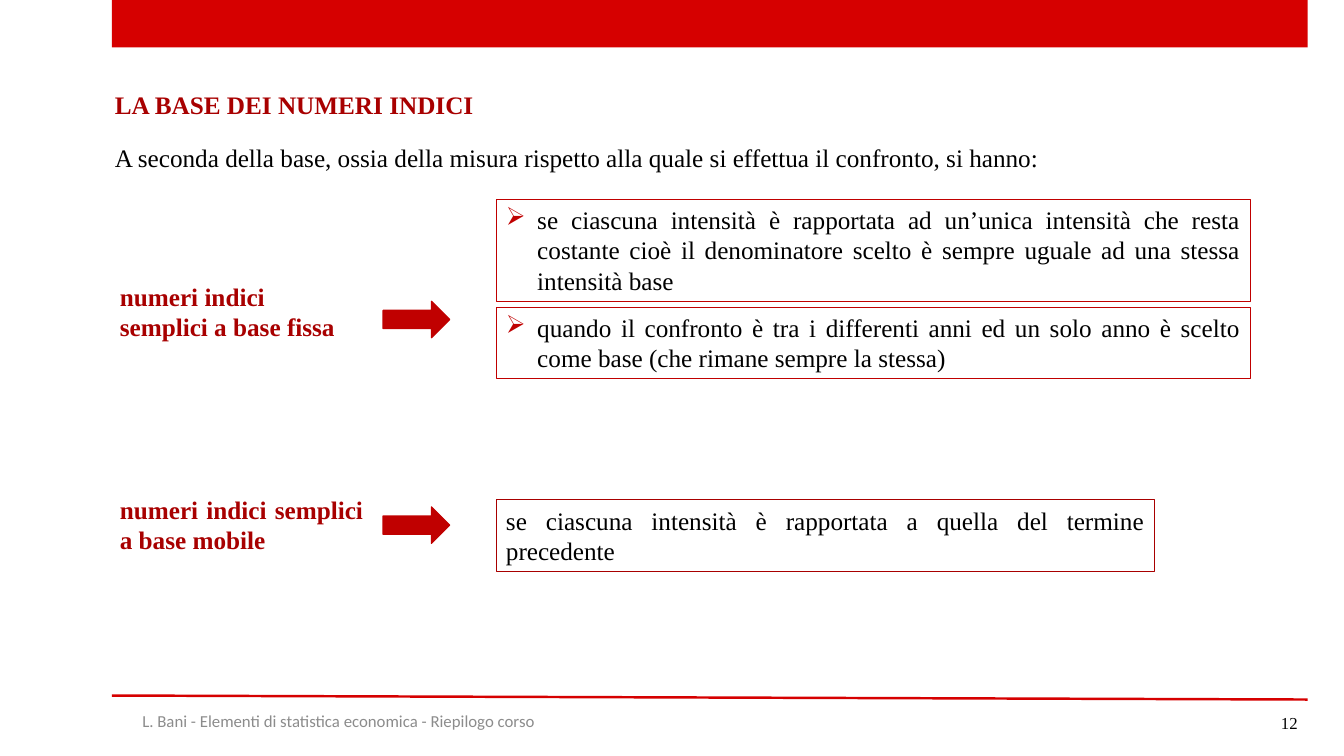
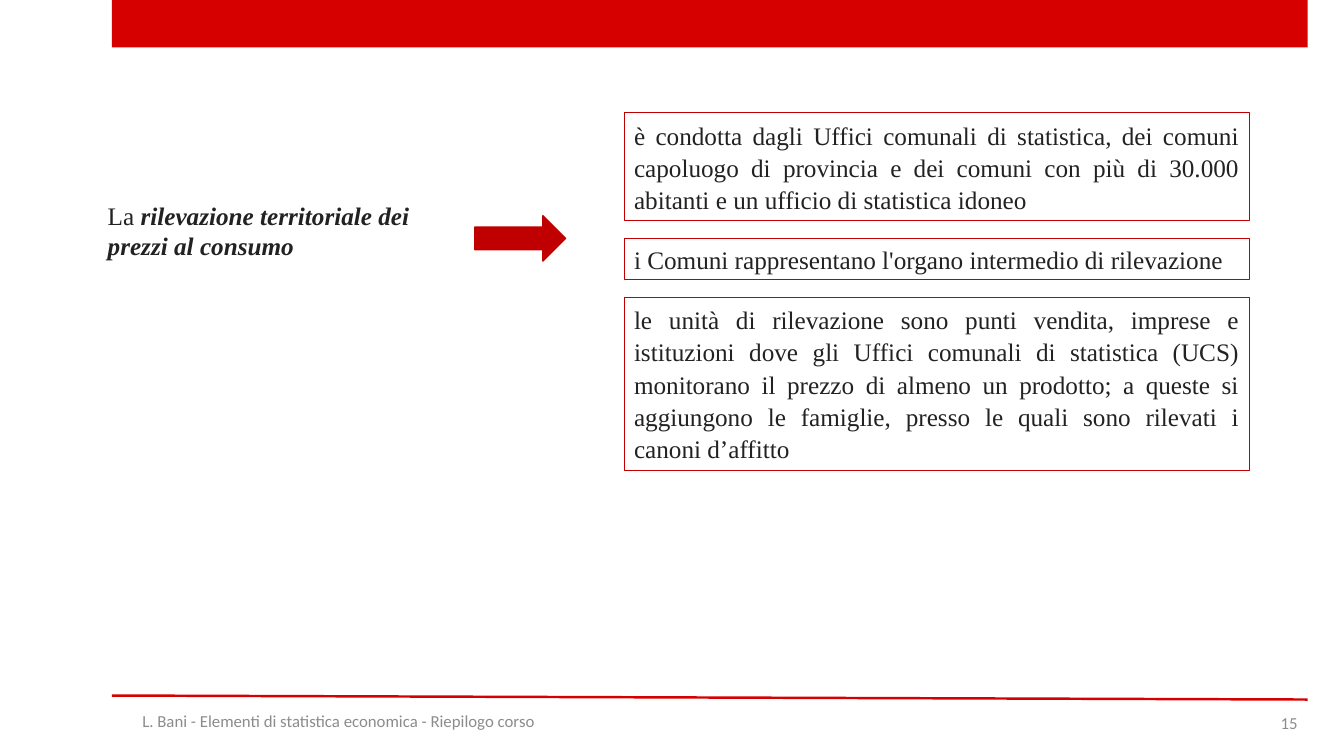
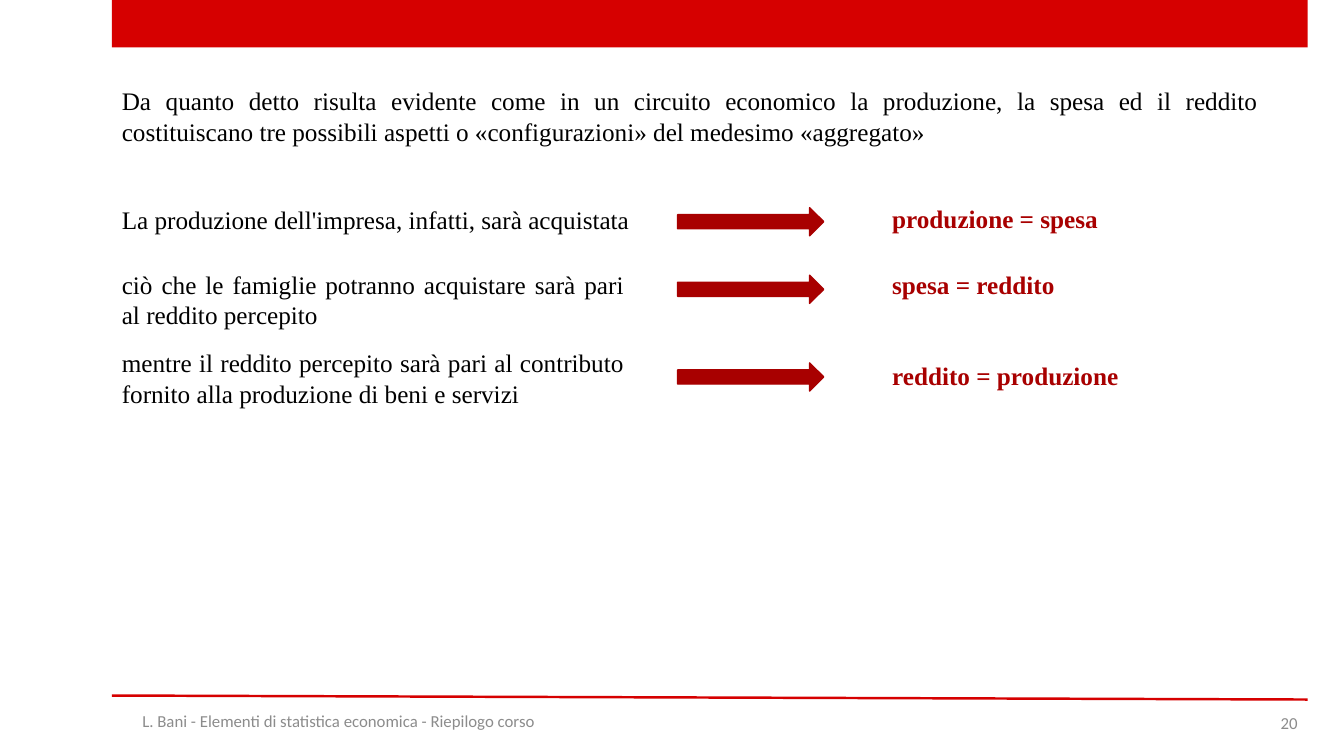
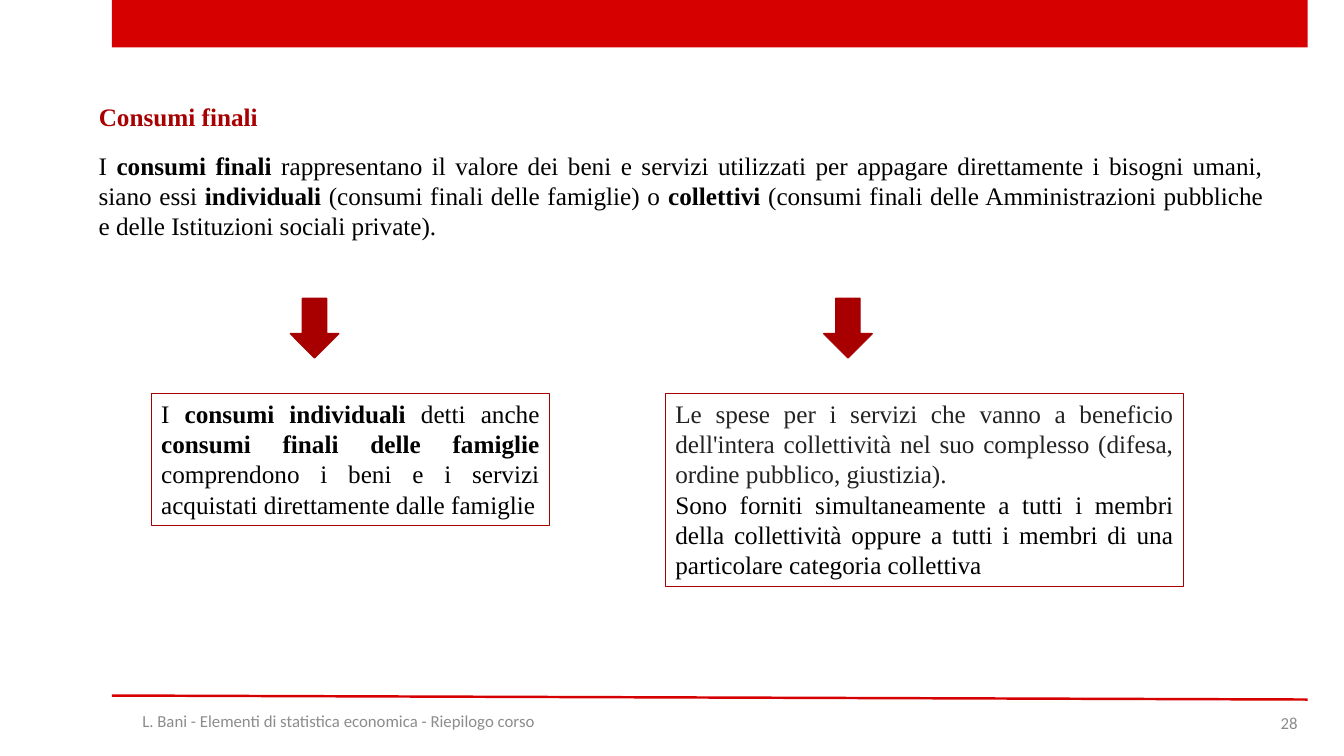
from dataclasses import dataclass

from lxml import etree
from pptx import Presentation
from pptx import util as u
from pptx.dml.color import RGBColor
from pptx.enum import shapes, text
from pptx.oxml.ns import qn


@dataclass(frozen=True)
class Theme:
    band: str = "D60000"
    red: str = "C00000"
    dark_red: str = "A80000"
    black: str = "000000"
    ink: str = "222222"
    grey: str = "8C8C8C"
    serif: str = "Times New Roman"
    sans: str = "Calibri"
    body: int = 18
    small: int = 12
    frame_line: float = 0.75
    arrow_line: float = 1
    rule_line: float = 1.75


@dataclass(frozen=True)
class Box:
    left: float
    top: float
    width: float
    height: float

    def inches(self):
        return [u.Inches(n) for n in (self.left, self.top, self.width, self.height)]


THEME = Theme()
LEFT, JUSTIFY = text.PP_ALIGN.LEFT, text.PP_ALIGN.JUSTIFY
RIGHT_ARROW = shapes.MSO_SHAPE.RIGHT_ARROW
DOWN_ARROW = shapes.MSO_SHAPE.DOWN_ARROW
TITLE_ONLY, BLANK = 5, 6
LINE, TWO_LINES, THREE_LINES = 0.4, 0.71, 1.01
FOOTER = "L. Bani - Elementi di statistica economica - Riepilogo corso"


def rgb(color):
    return RGBColor.from_string(color)


def add_bullet(para, color):
    props = para._p.get_or_add_pPr()
    indent = u.Inches(0.31)
    props.set("marL", str(indent))
    props.set("indent", str(-indent))
    bullet_color = etree.SubElement(props, qn("a:buClr"))
    etree.SubElement(bullet_color, qn("a:srgbClr")).set("val", color)
    etree.SubElement(props, qn("a:buChar")).set("char", "➢")


def write(shape, content, color=THEME.black, size=THEME.body, font=THEME.serif,
          bold=False, italic=False, align=LEFT, anchor=text.MSO_ANCHOR.TOP,
          spacing=None, bullet=None, wrap=True):
    """Append a paragraph; parts between ** marks are bold, and italic if asked."""
    frame = shape.text_frame
    frame.word_wrap = wrap
    frame.auto_size = text.MSO_AUTO_SIZE.NONE
    frame.vertical_anchor = anchor
    para = frame.add_paragraph() if frame.text else frame.paragraphs[0]
    para.alignment = align
    if bullet:
        add_bullet(para, bullet)
    if spacing:
        para.line_spacing = spacing
    for index, part in enumerate(content.split("**")):
        if not part:
            continue
        marked = index % 2 == 1
        span = para.add_run()
        span.text = part
        span.font.name, span.font.size = font, u.Pt(size)
        span.font.bold = bold or marked
        span.font.italic = italic and marked
        span.font.color.rgb = rgb(color)


def add_text(page, box, content, **style):
    write(page.shapes.add_textbox(*box.inches()), content, **style)


def add_title(page, box, content, **style):
    title = page.shapes.title
    title.left, title.top, title.width, title.height = box.inches()
    write(title, content, color=THEME.dark_red, bold=True, **style)


def add_solid(page, kind, box, color, line=None):
    shape = page.shapes.add_shape(kind, *box.inches())
    shape.shadow.inherit = False
    shape.fill.solid()
    shape.fill.fore_color.rgb = rgb(color)
    if line:
        shape.line.color.rgb = rgb(color)
        shape.line.width = u.Pt(line)
    else:
        shape.line.fill.background()
    return shape


def add_arrow(page, kind, box, color):
    add_solid(page, kind, box, color, THEME.arrow_line)


def add_frame(page, box, content, line=THEME.red, **style):
    frame = page.shapes.add_shape(shapes.MSO_SHAPE.RECTANGLE, *box.inches())
    frame.shadow.inherit = False
    frame.fill.background()
    frame.line.color.rgb = rgb(line)
    frame.line.width = u.Pt(THEME.frame_line)
    write(frame, content, align=JUSTIFY, **style)
    return frame


def stack_frames(page, left, top, width, gap, items):
    """Place framed texts, given as (height, text, style), one below another."""
    for height, content, style in items:
        add_frame(page, Box(left, top, width, height), content, **style)
        top += height + gap


def decorate_master(deck, page):
    """Draw the band and the bottom rule on a page, then move them to the master."""
    band = add_solid(page, shapes.MSO_SHAPE.RECTANGLE,
                     Box(1.11, 0, 11.86, 0.47), THEME.band)
    ends = [u.Inches(n) for n in (1.11, 6.9, 12.97, 6.94)]
    rule = page.shapes.add_connector(shapes.MSO_CONNECTOR.STRAIGHT, *ends)
    rule.line.color.rgb = rgb(THEME.band)
    rule.line.width = u.Pt(THEME.rule_line)
    etree.SubElement(rule.element.spPr, qn("a:effectLst"))
    for shape in (band, rule):
        deck.slide_master.shapes.element.append(shape.element)


def add_page(deck, layout, number, number_color=THEME.grey, number_font=THEME.sans):
    page = deck.slides.add_slide(deck.slide_layouts[layout])
    middle = text.MSO_ANCHOR.MIDDLE
    add_text(page, Box(1.11, 6.95, 4.5, LINE), FOOTER, color=THEME.grey,
             size=THEME.small, font=THEME.sans, align=text.PP_ALIGN.CENTER, anchor=middle)
    add_text(page, Box(9.97, 6.97, 3, LINE), str(number), color=number_color,
             size=THEME.small, font=number_font, align=text.PP_ALIGN.RIGHT, anchor=middle)
    return page


def index_base_slide(deck):
    page = add_page(deck, TITLE_ONLY, 12, THEME.black, THEME.serif)
    decorate_master(deck, page)
    add_title(page, Box(1.04, 0.84, 3.79, LINE), "LA BASE DEI NUMERI INDICI", wrap=False)
    add_text(page, Box(1.04, 1.36, 10.58, LINE),
             "A seconda della base, ossia della misura rispetto alla quale "
             "si effettua il confronto, si hanno:")

    terms = [(2.74, 2.48, 2.99, LEFT, "numeri indici semplici a base fissa"),
             (4.85, 2.61, 5.03, JUSTIFY, "numeri indici semplici a base mobile")]
    for top, width, arrow_top, align, term in terms:
        add_text(page, Box(1.09, top, width, TWO_LINES), term,
                 color=THEME.dark_red, bold=True, align=align)
        add_arrow(page, RIGHT_ARROW, Box(3.8, arrow_top, 0.66, 0.36), THEME.red)

    bulleted = {"bullet": THEME.red}
    stack_frames(page, 4.92, 1.98, 7.48, 0.06, [
        (THREE_LINES, "se ciascuna intensità è rapportata ad un’unica intensità che resta "
         "costante cioè il denominatore scelto è sempre uguale ad una stessa "
         "intensità base", bulleted),
        (TWO_LINES, "quando il confronto è tra i differenti anni ed un solo anno è scelto "
         "come base (che rimane sempre la stessa)", bulleted)])
    add_frame(page, Box(4.92, 4.96, 6.53, TWO_LINES),
              "se ciascuna intensità è rapportata a quella del termine precedente",
              line=THEME.dark_red)


def price_survey_slide(deck):
    page = add_page(deck, BLANK, 15)
    add_text(page, Box(0.97, 1.94, 3.5, TWO_LINES),
             "La** rilevazione territoriale dei prezzi al consumo**",
             color=THEME.ink, italic=True)
    add_arrow(page, RIGHT_ARROW, Box(4.71, 2.14, 0.9, 0.45), THEME.red)
    plain = {"color": THEME.ink}
    loose = {"color": THEME.ink, "spacing": 1.07}
    stack_frames(page, 6.19, 1.12, 6.2, 0.18, [
        (1.07, "è condotta dagli Uffici comunali di statistica, dei comuni capoluogo di "
         "provincia e dei comuni con più di 30.000 abitanti e un ufficio di "
         "statistica idoneo", loose),
        (LINE, "i Comuni rappresentano l'organo intermedio di rilevazione", plain),
        (1.72, "le unità di rilevazione sono punti vendita, imprese e istituzioni dove gli "
         "Uffici comunali di statistica (UCS) monitorano il prezzo di almeno un "
         "prodotto; a queste si aggiungono le famiglie, presso le quali sono rilevati "
         "i canoni d’affitto", loose)])


def equality_row(page, box, statement, result, arrow_drop, result_drop):
    """Put a statement in the box, then an arrow and the equality it leads to."""
    add_text(page, box, statement, align=JUSTIFY)
    add_arrow(page, RIGHT_ARROW,
              Box(box.left + 5.61, box.top + arrow_drop, 1.45, 0.28), THEME.dark_red)
    add_text(page, Box(box.left + 7.64, box.top + result_drop, 2.58, LINE), result,
             color=THEME.dark_red, bold=True)


def circuit_slide(deck):
    page = add_page(deck, BLANK, 20)
    add_text(page, Box(1.11, 0.8, 11.47, TWO_LINES),
             "Da quanto detto risulta evidente come in un circuito economico la produzione, "
             "la spesa ed il reddito costituiscano tre possibili aspetti o "
             "«configurazioni» del medesimo «aggregato»", align=JUSTIFY)
    equality_row(page, Box(1.11, 1.98, 5.61, LINE),
                 "La produzione dell'impresa, infatti, sarà acquistata",
                 "produzione = spesa", 0.08, -0.01)
    equality_row(page, Box(1.11, 2.62, 5.18, TWO_LINES),
                 "ciò che le famiglie potranno acquistare sarà pari al reddito percepito",
                 "spesa = reddito", 0.11, 0)
    equality_row(page, Box(1.11, 3.4, 5.18, TWO_LINES),
                 "mentre il reddito percepito sarà pari al contributo fornito alla "
                 "produzione di beni e servizi", "reddito = produzione", 0.2, 0.13)


def consumption_column(page, box, arrow_shift, content, **style):
    """Frame a text in the box, with a down arrow above it."""
    add_arrow(page, DOWN_ARROW,
              Box(box.left + arrow_shift, box.top - 0.94, 0.48, 0.59), THEME.dark_red)
    return add_frame(page, box, content, line=THEME.dark_red, **style)


def consumption_slide(deck):
    page = add_page(deck, TITLE_ONLY, 28)
    add_title(page, Box(0.88, 0.93, 1.79, 0.43), "Consumi finali", spacing=1.07, wrap=False)
    add_text(page, Box(0.88, 1.44, 11.75, THREE_LINES),
             "I **consumi finali **rappresentano il valore dei beni e servizi utilizzati per "
             "appagare direttamente i bisogni umani, siano essi **individuali** (consumi "
             "finali delle famiglie) o **collettivi** (consumi finali delle Amministrazioni "
             "pubbliche e delle Istituzioni sociali private).", align=JUSTIFY)
    consumption_column(page, Box(1.5, 3.9, 3.95, 1.31), 1.38,
                       "I **consumi individuali **detti anche **consumi finali delle "
                       "famiglie **comprendono i beni e i servizi acquistati direttamente "
                       "dalle famiglie")
    collective = consumption_column(
        page, Box(6.6, 3.9, 5.14, 1.92), 1.57,
        "Le spese per i servizi che vanno a beneficio dell'intera collettività nel suo "
        "complesso (difesa, ordine pubblico, giustizia).", color=THEME.ink)
    write(collective, "Sono forniti simultaneamente a tutti i membri della collettività "
          "oppure a tutti i membri di una particolare categoria collettiva", align=JUSTIFY)


def main():
    deck = Presentation()
    deck.slide_width, deck.slide_height = u.Inches(13.33), u.Inches(7.5)
    for build in (index_base_slide, price_survey_slide, circuit_slide, consumption_slide):
        build(deck)
    deck.save("out.pptx")


if __name__ == "__main__":
    main()
